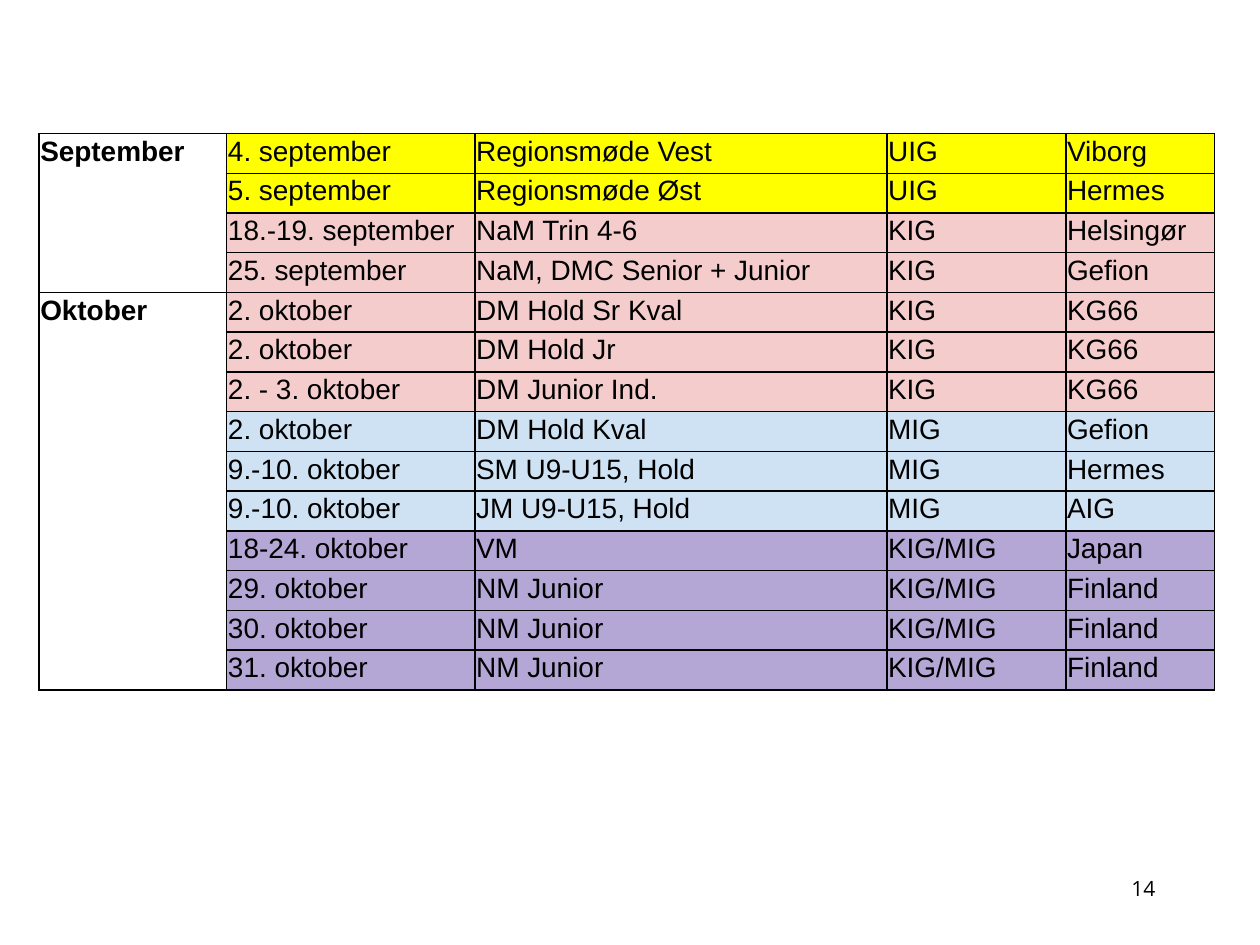
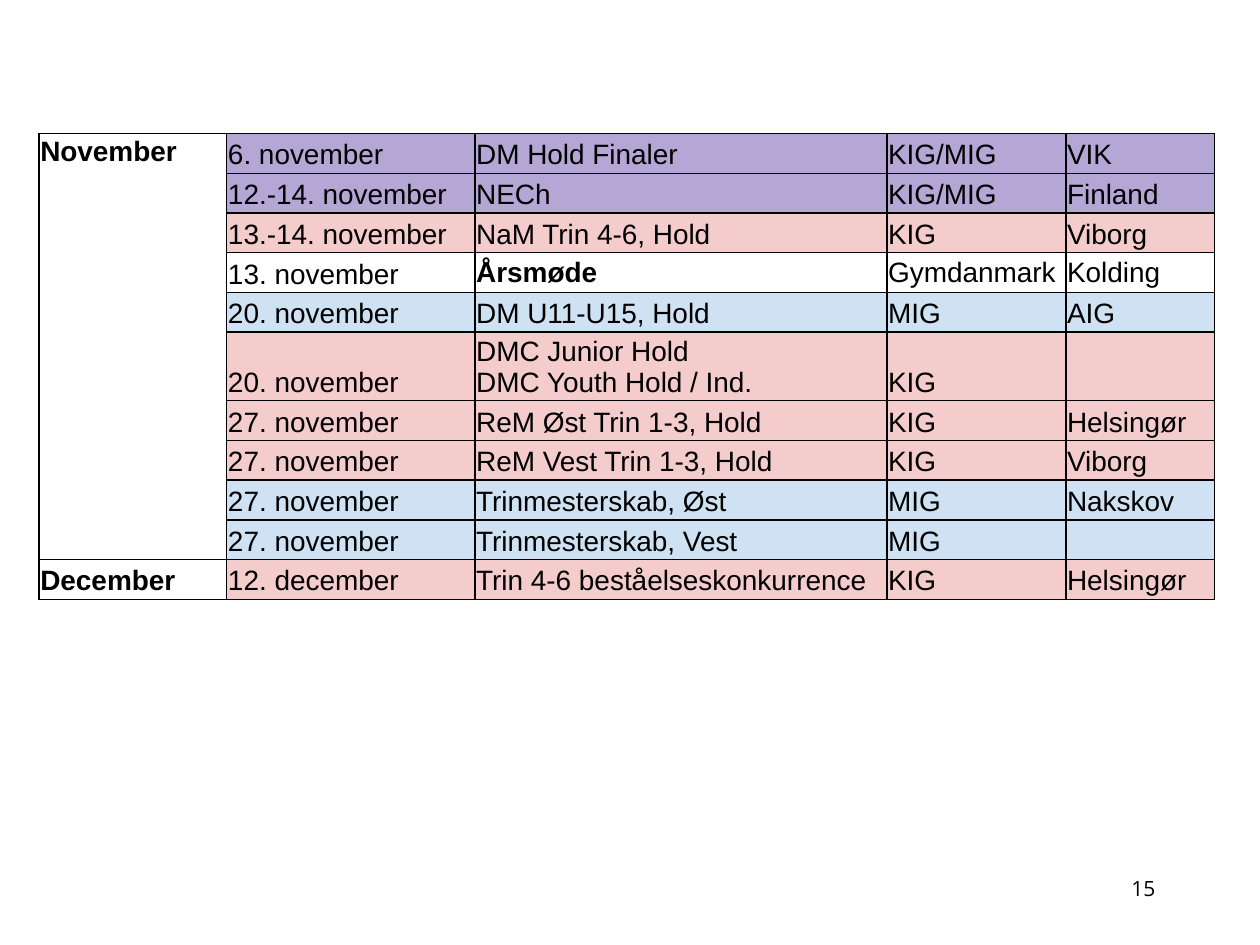
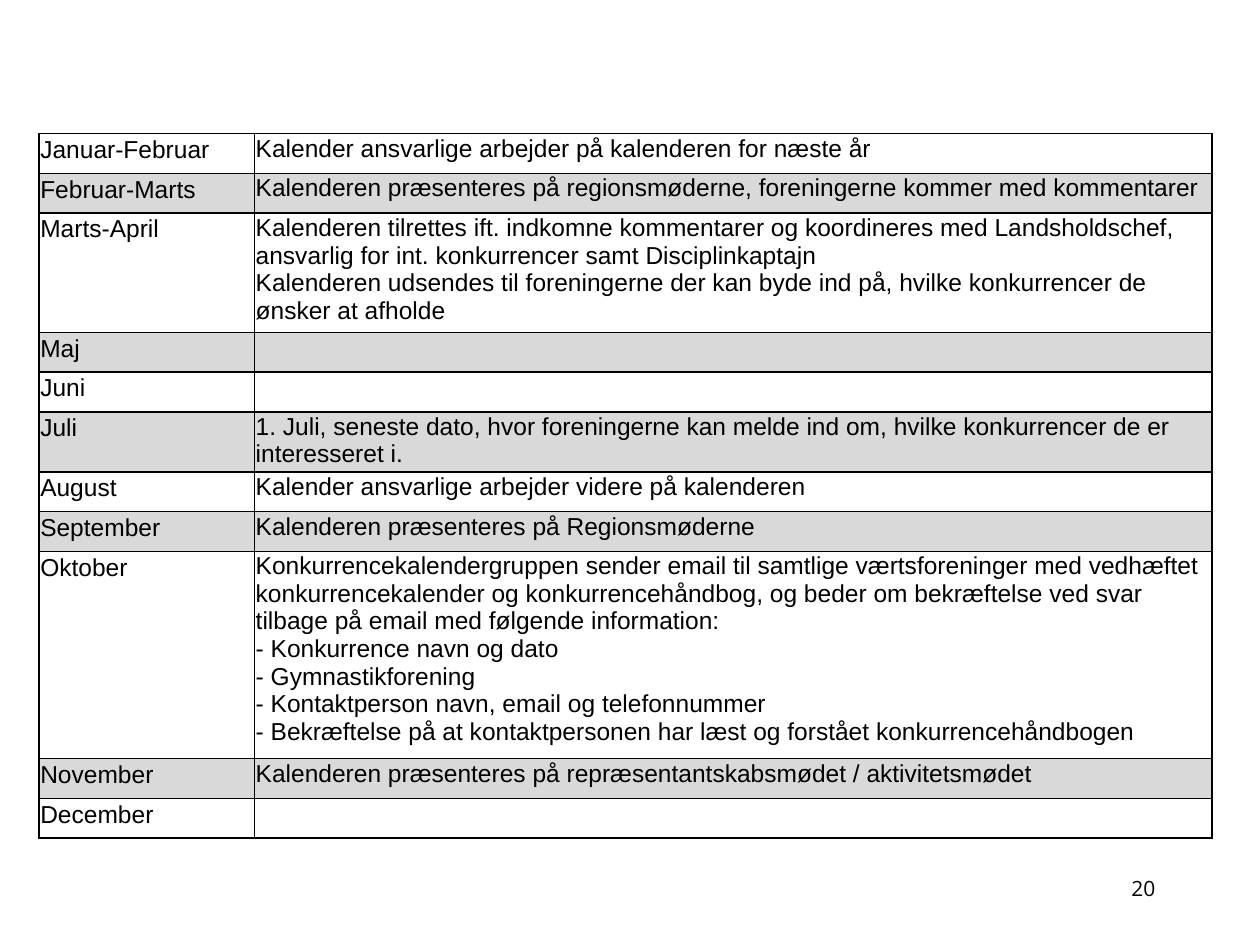
from dataclasses import dataclass

from pptx import Presentation
from pptx.dml.color import RGBColor
from pptx.enum import text
from pptx.oxml import xmlchemy
from pptx.util import Emu, Inches, Pt

TOP, MIDDLE, BOTTOM = (text.MSO_ANCHOR.TOP, text.MSO_ANCHOR.MIDDLE,
                       text.MSO_ANCHOR.BOTTOM)


@dataclass(frozen=True)
class Theme:
    ink: str = "000000"
    region: str = "FFFF00"
    women: str = "F4CCCC"
    men: str = "CFE2F3"
    joint: str = "B4A7D6"
    band: str = "D9D9D9"
    body_font: str = "Arial"
    number_font: str = "Open Sans"
    event_size: int = 16
    task_size: int = 14
    number_size: int = 12
    border: float = 1
    # Cell insets in inches: left, top, right, bottom
    normal_inset: tuple = (0.01, 0.02, 0.01, 0.02)
    tight_inset: tuple = (0.01, 0.01, 0.01, 0)


THEME = Theme()

# Shares of the slide's width and height
TABLE_LEFT, TABLE_TOP = 0.31 / 10, 1.06 / 7.5
GRID_ROW = 4.42 / 14 / 7.5
EVENT_COLUMNS = [0.15, 0.2, 0.33, 0.14, 0.12]
EVENT_COLUMNS = [share / 10 for share in (1.49, 1.97, 3.27, 1.42, 1.18)]
TASK_COLUMNS = [share / 10 for share in (1.71, 7.6)]
NUMBER_BOX = (8.88 / 10, 6.9 / 7.5, 0.62 / 10, 0.3 / 7.5)


@dataclass
class Cell:
    words: object = ""  # one paragraph, or a list of paragraphs
    fill: str = None
    bold: bool = False
    anchor: object = TOP
    tight: bool = False
    span: int = 1


class Calendar:
    """Holds the theme and the current slide."""

    def __init__(self, theme):
        self.theme = theme
        self.deck = Presentation()
        self.deck.slide_width, self.deck.slide_height = Inches(10), Inches(7.5)
        self.page = None

    def across(self, share):
        return Emu(round(self.deck.slide_width * share))

    def down(self, share):
        return Emu(round(self.deck.slide_height * share))

    def add_page(self, number):
        self.page = self.deck.slides.add_slide(self.deck.slide_layouts[6])
        left, top, width, height = NUMBER_BOX
        box = self.page.shapes.add_textbox(
            self.across(left), self.down(top), self.across(width), self.down(height))
        box.text_frame.word_wrap = True
        self.add_span(box.text_frame.paragraphs[0], str(number),
                      self.theme.number_size, self.theme.number_font)

    def add_span(self, para, words, size, font, bold=False):
        span = para.add_run()
        span.text = words
        span.font.size, span.font.name, span.font.bold = Pt(size), font, bold
        span.font.color.rgb = RGBColor.from_string(self.theme.ink)

    def add_table(self, columns, rows, size, tall_rows):
        """Draw rows of cells; None marks a cell covered by a span above.

        tall_rows gives the height, in grid rows, of rows that are not one high.
        """
        heights = [GRID_ROW * tall_rows.get(i, 1) for i in range(len(rows))]
        table = self.page.shapes.add_table(
            len(rows), len(columns), self.across(TABLE_LEFT), self.down(TABLE_TOP),
            self.across(sum(columns)), self.down(sum(heights))).table
        table.first_row = table.horz_banding = False
        for column, width in zip(table.columns, columns):
            column.width = self.across(width)
        for row, height in zip(table.rows, heights):
            row.height = self.down(height)
        for i, row in enumerate(rows):
            for j, content in enumerate(row):
                target = table.cell(i, j)
                self.style_cell(target, content or Cell())
                if content:
                    self.write_cell(target, content, size)
                    if content.span > 1:
                        target.merge(table.cell(i + content.span - 1, j))

    def style_cell(self, target, content):
        theme = self.theme
        inset = theme.tight_inset if content.tight else theme.normal_inset
        (target.margin_left, target.margin_top,
         target.margin_right, target.margin_bottom) = map(Inches, inset)
        target.vertical_anchor = content.anchor
        # Borders come before the fill in the cell's properties
        properties = target._tc.get_or_add_tcPr()
        for side in ("lnL", "lnR", "lnT", "lnB"):
            line = xmlchemy.OxmlElement(f"a:{side}")
            line.set("w", str(Pt(theme.border)))
            solid = xmlchemy.OxmlElement("a:solidFill")
            color = xmlchemy.OxmlElement("a:srgbClr")
            color.set("val", theme.ink)
            solid.append(color)
            line.append(solid)
            properties.append(line)
        if content.fill:
            target.fill.solid()
            target.fill.fore_color.rgb = RGBColor.from_string(content.fill)
        else:
            target.fill.background()

    def write_cell(self, target, content, size):
        frame = target.text_frame
        paragraphs = content.words if isinstance(content.words, list) else [content.words]
        for i, words in enumerate(paragraphs):
            para = frame.add_paragraph() if i else frame.paragraphs[0]
            if not words:
                # Keeps an empty cell from stretching its row
                end = xmlchemy.OxmlElement("a:endParaRPr")
                end.set("sz", str(size * 100))
                para._p.append(end)
                continue
            for k, line in enumerate(words.split("\n")):
                if k:
                    para.add_line_break()
                self.add_span(para, line, size, self.theme.body_font, content.bold)


# Events by month: fill, date, event, committee, place
REGION, WOMEN, MEN, JOINT = THEME.region, THEME.women, THEME.men, THEME.joint

AUTUMN = [
    ("September", [
        (REGION, "4. september", "Regionsmøde Vest", "UIG", "Viborg"),
        (REGION, "5. september", "Regionsmøde Øst", "UIG", "Hermes"),
        (WOMEN, "18.-19. september", "NaM Trin 4-6", "KIG", "Helsingør"),
        (WOMEN, "25. september", "NaM, DMC Senior + Junior", "KIG", "Gefion"),
    ]),
    ("Oktober", [
        (WOMEN, "2. oktober", "DM Hold Sr Kval", "KIG", "KG66"),
        (WOMEN, "2. oktober", "DM Hold Jr", "KIG", "KG66"),
        (WOMEN, "2. - 3. oktober", "DM Junior Ind.", "KIG", "KG66"),
        (MEN, "2. oktober", "DM Hold Kval", "MIG", "Gefion"),
        (MEN, "9.-10. oktober", "SM U9-U15, Hold", "MIG", "Hermes"),
        (MEN, "9.-10. oktober", "JM U9-U15, Hold", "MIG", "AIG"),
        (JOINT, "18-24. oktober", "VM", "KIG/MIG", "Japan"),
        *[(JOINT, f"{day}. oktober", "NM Junior", "KIG/MIG", "Finland")
          for day in (29, 30, 31)],
    ]),
]

WINTER = [
    ("November", [
        (JOINT, "6. november", "DM Hold Finaler", "KIG/MIG", "VIK"),
        (JOINT, "12.-14. november", "NECh", "KIG/MIG", "Finland"),
        (WOMEN, "13.-14. november", "NaM Trin 4-6, Hold", "KIG", "Viborg"),
        (None, "13. november", "Årsmøde", "Gymdanmark", "Kolding"),
        (MEN, "20. november", "DM U11-U15, Hold", "MIG", "AIG"),
        (WOMEN, "20. november", ["DMC Junior Hold", "DMC Youth Hold / Ind."], "KIG", ""),
        (WOMEN, "27. november", "ReM Øst Trin 1-3, Hold", "KIG", "Helsingør"),
        (WOMEN, "27. november", "ReM Vest Trin 1-3, Hold", "KIG", "Viborg"),
        (MEN, "27. november", "Trinmesterskab, Øst", "MIG", "Nakskov"),
        (MEN, "27. november", "Trinmesterskab, Vest", "MIG", ""),
    ]),
    ("December", [
        (WOMEN, "12. december", "Trin 4-6 beståelseskonkurrence", "KIG", "Helsingør"),
    ]),
]

# Yearly plan: period and tasks
TASKS = [
    ("Januar-Februar", "Kalender ansvarlige arbejder på kalenderen for næste år"),
    ("Februar-Marts", "Kalenderen præsenteres på regionsmøderne, foreningerne kommer "
                      "med kommentarer"),
    ("Marts-April", ["Kalenderen tilrettes ift. indkomne kommentarer og koordineres med "
                     "Landsholdschef, ansvarlig for int. konkurrencer samt Disciplinkaptajn",
                     "Kalenderen udsendes til foreningerne der kan byde ind på, hvilke "
                     "konkurrencer de ønsker at afholde"]),
    ("Maj", ""),
    ("Juni", ""),
    ("Juli", "1. Juli, seneste dato, hvor foreningerne kan melde ind om, hvilke "
             "konkurrencer de er interesseret i."),
    ("August", "Kalender ansvarlige arbejder videre på kalenderen"),
    ("September", "Kalenderen præsenteres på Regionsmøderne"),
    ("Oktober", "Konkurrencekalendergruppen sender email til samtlige værtsforeninger med "
                "vedhæftet konkurrencekalender og konkurrencehåndbog, og beder om "
                "bekræftelse ved svar tilbage på email med følgende information:\n"
                "- Konkurrence navn og dato\n"
                "- Gymnastikforening\n"
                "- Kontaktperson navn, email og telefonnummer\n"
                "- Bekræftelse på at kontaktpersonen har læst og forstået "
                "konkurrencehåndbogen"),
    ("November", "Kalenderen præsenteres på repræsentantskabsmødet / aktivitetsmødet"),
    ("December", ""),
]


def event_rows(months, anchor):
    """Month cells span their events; unfilled events are meetings."""
    rows = []
    for month, events in months:
        month_anchor = TOP if len(events) > 1 else anchor
        for i, (fill, date, event, *details) in enumerate(events):
            meeting = fill is None
            centred = meeting or isinstance(event, list)
            rows.append([
                None if i else Cell(month, bold=True, anchor=month_anchor,
                                    span=len(events)),
                Cell(date, fill, anchor=anchor),
                Cell(event, fill, meeting, MIDDLE if centred else anchor,
                     centred and not meeting),
                *[Cell(detail, fill, anchor=MIDDLE if meeting else anchor, tight=meeting)
                  for detail in details],
            ])
    return rows


def task_rows(tasks):
    rows = []
    for i, (period, task) in enumerate(tasks):
        fill = THEME.band if i % 2 else None
        rows.append([Cell(period, fill), Cell(task, fill, tight=True)])
    return rows


def main():
    calendar = Calendar(THEME)

    # Events in September and October
    calendar.add_page(14)
    calendar.add_table(EVENT_COLUMNS, event_rows(AUTUMN, TOP), THEME.event_size, {})

    # Events in November and December
    calendar.add_page(15)
    calendar.add_table(EVENT_COLUMNS, event_rows(WINTER, BOTTOM), THEME.event_size,
                       {5: 1.7})

    # Yearly plan
    calendar.add_page(20)
    calendar.add_table(TASK_COLUMNS, task_rows(TASKS), THEME.task_size,
                       {2: 3, 5: 1.5, 8: 5.2})

    calendar.deck.save("out.pptx")


if __name__ == "__main__":
    main()
